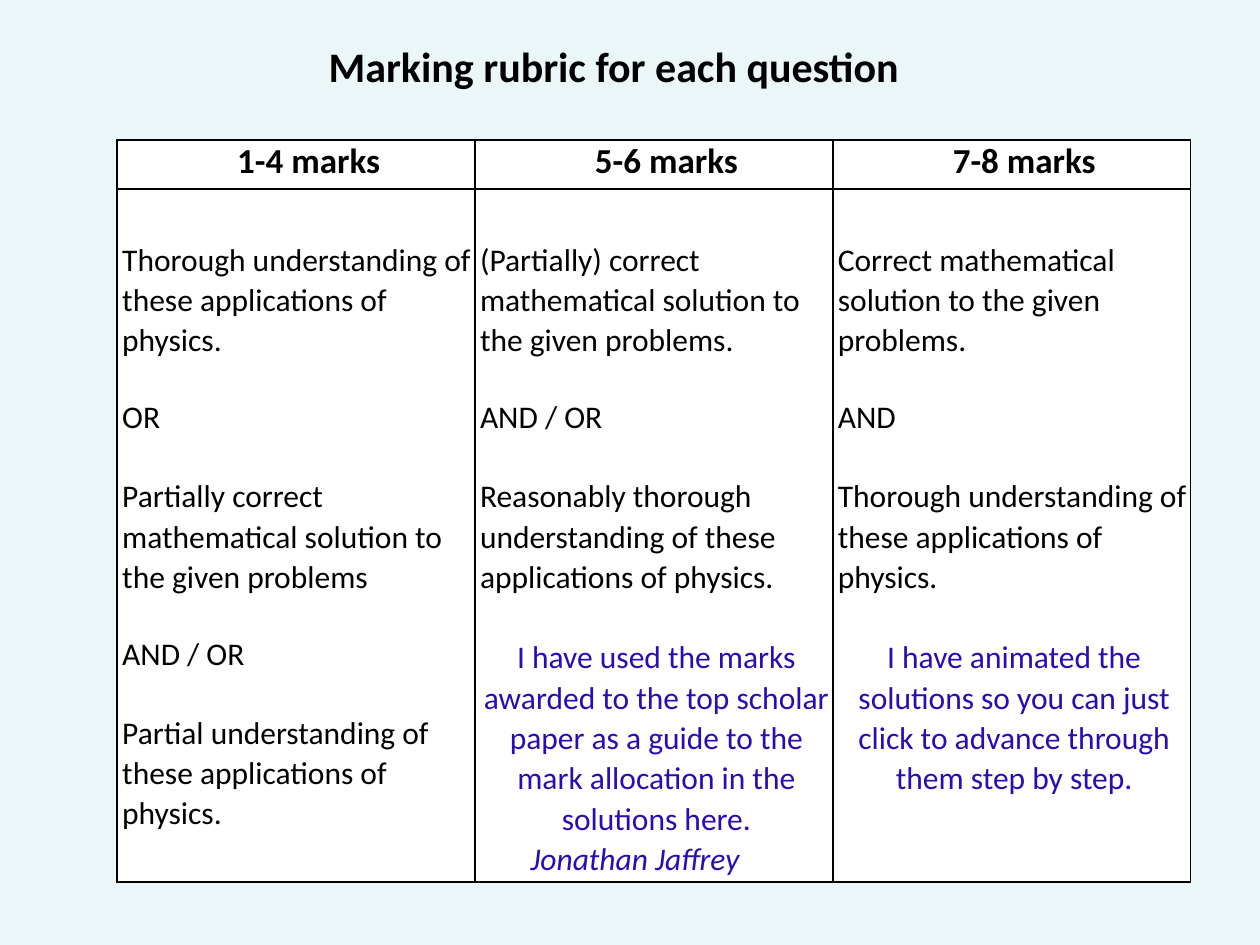
"""Build the marking rubric slide."""
from lxml import etree
from pptx import Presentation
from pptx.dml.color import RGBColor
from pptx.enum import text
from pptx.oxml import ns
from pptx.util import Inches, Pt

BLACK = RGBColor(0x00, 0x00, 0x00)
WHITE = RGBColor(0xFF, 0xFF, 0xFF)
BLUE = RGBColor(0x2B, 0x0B, 0xB5)
PALE = RGBColor(0xEB, 0xF6, 0xF9)
LEFT, CENTER = text.PP_ALIGN.LEFT, text.PP_ALIGN.CENTER


def style(p, size, color=BLACK, bold=False, italic=False, align=LEFT, indent=0):
    p.font.name, p.font.size = "Calibri", Pt(size)
    p.font.bold, p.font.italic = bold, italic
    p.font.color.rgb = color
    p.alignment = align
    pPr = p._p.get_or_add_pPr()
    pPr.set("marL", str(Inches(indent)))
    pPr.set("indent", "0")


def format_cell(cell):
    cell.fill.solid()
    cell.fill.fore_color.rgb = WHITE
    cell.margin_left = cell.margin_right = cell.margin_top = cell.margin_bottom = 0
    tcPr = cell._tc.get_or_add_tcPr()
    for i, side in enumerate(("lnL", "lnR", "lnT", "lnB")):
        ln = etree.Element(ns.qn(f"a:{side}"), w=str(Pt(1)))
        fill = etree.SubElement(ln, ns.qn("a:solidFill"))
        etree.SubElement(fill, ns.qn("a:srgbClr"), val=str(BLACK))
        tcPr.insert(i, ln)


prs = Presentation()
prs.slide_width, prs.slide_height = Inches(10), Inches(7.5)
s = prs.slides.add_slide(prs.slide_layouts[6])
s.background.fill.solid()
s.background.fill.fore_color.rgb = PALE

THOROUGH = "Thorough understanding of these applications of physics."
COLUMNS = [
    ("1-4 marks", [
        THOROUGH,
        "OR",
        "Partially correct mathematical solution to the given problems",
        "AND / OR",
        "Partial understanding of these applications of physics.",
    ], "", ""),
    ("5-6 marks", [
        "(Partially) correct mathematical solution to the given problems.",
        "AND / OR",
        "Reasonably thorough understanding of these applications of physics.",
    ], "I have used the marks awarded to the top scholar paper as a guide "
       "to the mark allocation in the solutions here.", "Jonathan Jaffrey"),
    ("7-8 marks", [
        "Correct mathematical solution to the given problems.",
        "AND",
        THOROUGH,
    ], "I have animated the solutions so you can just click to advance "
       "through them step by step.", ""),
]

table = s.shapes.add_table(2, 3, Inches(0.93), Inches(1.11),
                           Inches(8.52), Inches(5.89)).table
table.horz_banding = False
table.rows[0].height, table.rows[1].height = Inches(0.39), Inches(5.5)

for col, (marks, criteria, note, author) in enumerate(COLUMNS):
    table.columns[col].width = Inches(2.84)
    head, body = table.cell(0, col), table.cell(1, col)
    format_cell(head)
    format_cell(body)
    p = head.text_frame.paragraphs[0]
    p.text = marks
    style(p, 20, bold=True, align=CENTER, indent=0.2)
    p.space_before = Pt(3.1)

    body.margin_top = Inches(0.4)
    tf = body.text_frame
    for i, line in enumerate(criteria):
        p = tf.paragraphs[0] if i == 0 else tf.add_paragraph()
        p.text = line
        style(p, 18, indent=0.04)
        p.space_before = Pt(22 if i else 0)
        p.line_spacing = 1 if i % 2 else 1.05
    if note:
        p = tf.add_paragraph()
        p.text = note
        style(p, 18, BLUE, align=CENTER, indent=0.04)
        p.space_before, p.line_spacing = Pt(23), 1.05
    if author:
        p = tf.add_paragraph()
        p.text = author
        style(p, 18, BLUE, italic=True, indent=0.44)
        p.line_spacing = 1.05

tf = s.shapes.add_textbox(Inches(2.51), Inches(0.27), Inches(4.77), Inches(0.5)).text_frame
tf.word_wrap = False
tf.auto_size = text.MSO_AUTO_SIZE.SHAPE_TO_FIT_TEXT
p = tf.paragraphs[0]
p.text = "Marking rubric for each question"
style(p, 24, bold=True)

prs.save("out.pptx")
